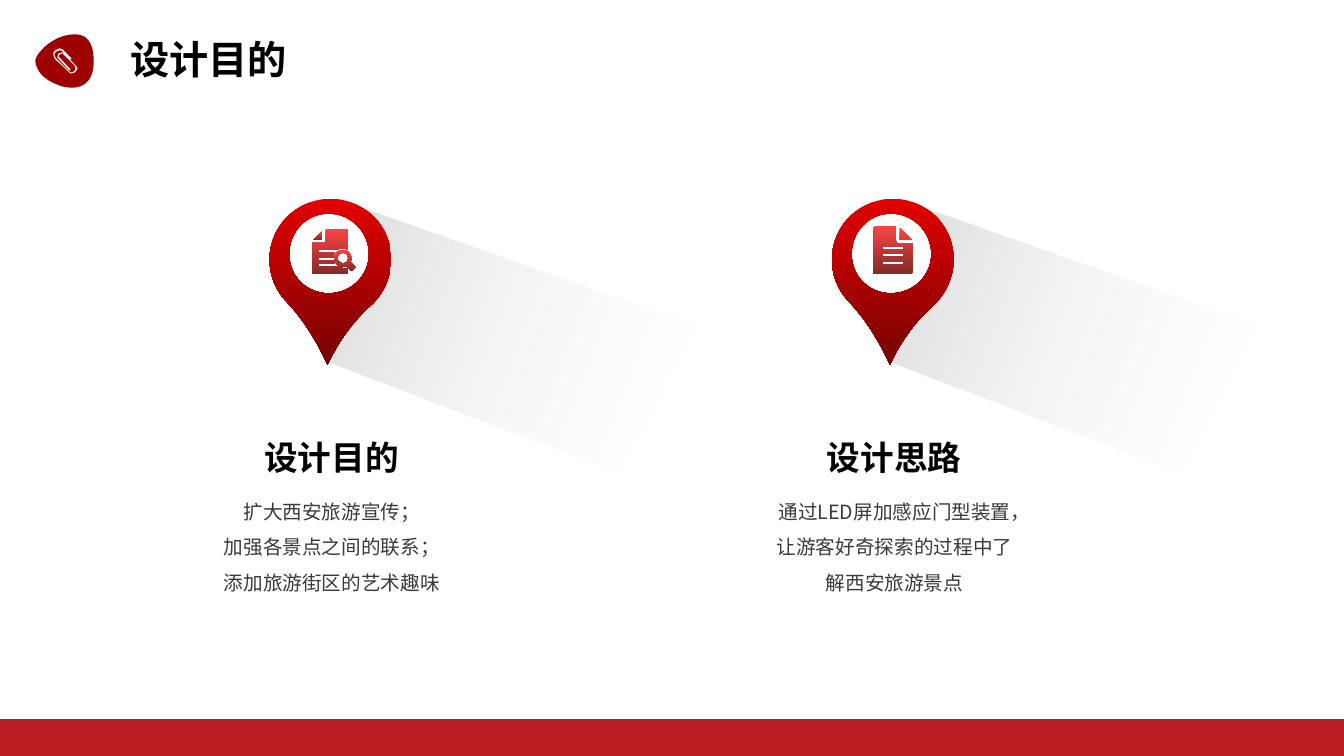
from pptx import Presentation
from pptx.dml.color import RGBColor
from pptx.enum.shapes import MSO_SHAPE
from pptx.enum.text import MSO_AUTO_SIZE, PP_ALIGN
from pptx.oxml.ns import qn
from pptx.util import Cm, Pt
from lxml import etree

RECT = MSO_SHAPE.RECTANGLE
FIT = MSO_AUTO_SIZE.SHAPE_TO_FIT_TEXT
LEFT, CENTER = PP_ALIGN.LEFT, PP_ALIGN.CENTER

FONT = "Noto Sans CJK SC"
COLORS = {
    "bar": "B81E22", "badge": "9C0000", "white": "FFFFFF",
    "heading": "000000", "body": "3B3838",
    "pin_top": "E30000", "pin_bottom": "760303",
    "icon_top": "FE4444", "icon_bottom": "832B2B",
    "shadow_near": "3B3838", "shadow_far": "F2F2F2",
}
PIN_FILL = ("pin_top", "pin_bottom")
ICON_FILL = ("icon_top", "icon_bottom")
SHADOW_FILL = ("shadow_near", "shadow_far")

# Outlines are (left, top, width, height) and a path, in hundredths of an inch
UNIT = Cm(0.0254)
COLUMN_PITCH = 558
PATH_TAGS = {"M": "a:moveTo", "L": "a:lnTo", "C": "a:cubicBezTo", "Z": "a:close"}

PIN = (267, 197, 121, 164), """M 326 212 C 304 212 287 230 287 252
C 287 274 304 291 326 291 C 348 291 366 274 366 252 C 366 230 348 212 326 212 Z
M 330 197 C 345 198 360 204 372 216 C 395 241 393 279 369 302
C 351 318 336 338 325 362 C 314 338 301 317 284 299
C 261 275 262 237 286 214 C 299 202 314 197 330 197 Z"""
SHADOW = (409, 156, 166, 358), """M 564 156 L 575 514 L 411 496 L 409 186
C 566 220 553 153 564 156 Z"""
DOCUMENT = (866, 224, 40, 47), """M 906 242 L 906 269 C 906 271 905 272 904 272
L 869 272 C 867 272 866 271 866 269 L 866 227 C 866 226 867 224 869 224
L 889 224 L 889 239 C 889 240 890 242 892 242 L 906 242 Z
M 896 245 L 876 245 L 876 248 L 896 248 L 896 245 Z
M 896 251.5 L 876 251.5 L 876 254.5 L 896 254.5 L 896 251.5 Z
M 896 259 L 876 259 L 876 262 L 896 262 L 896 259 Z
M 905 238 L 893 238 L 893 226 L 905 238 Z"""
LENS = (331, 247, 21, 22), """M 353 265 L 348 260 C 349 257 349 253 346 250
C 343 247 338 247 334 250 C 331 254 331 259 334 262
C 337 265 341 265 344 264 L 349 269 L 353 265 Z
M 344 260 C 342 262 339 262 337 260 C 334 258 334 255 337 252
C 339 250 342 250 344 252 C 346 255 346 258 344 260 Z"""
SHEET = (310, 227, 36, 45), """M 341 266 C 338 266 336 265 334 264 L 316 264
L 316 261 L 332 261 C 331 260 331 259 331 258 L 316 258 L 316 255 L 331 255
C 331 253 331 252 332 251 L 316 251 L 316 248 L 334 248
C 336 247 338 246 341 246 C 342 246 344 247 346 248
L 346 227 L 323 227 L 323 241 L 310 241 L 310 272 L 346 272
L 346 268 L 344 266 L 341 266 Z"""
SHEET_CORNER = (311, 229, 9, 9), "M 320 229 L 311 238 L 320 238 L 320 229 Z"
BADGE = (35, 34, 58, 54), """M 72 87 C 66 87 61 86 57 84 C 51 82 45 78 41 74
C 38 70 35 65 35 60 C 35 57 39 52 41 50 C 45 45 51 41 57 38
C 64 35 75 32 83 36 C 91 40 93 52 93 60 C 93 70 91 79 83 84
C 80 86 76 87 72 87 Z"""
PAPERCLIP = (53, 48, 24, 25), """M 71 58 L 70 59 L 63 52 C 62 50 61 50 59 50
C 58 50 57 50 56 51 C 55 52 54 53 54 54 C 54 56 55 57 56 58 L 69 71
C 69 71 70 72 71 72 C 72 72 73 72 73 71 C 74 71 75 69 75 68
C 75 67 75 66 74 65 L 63 54 C 63 54 62 53 62 53 C 61 53 60 54 59 54
C 59 55 58 56 58 57 C 58 57 59 57 59 57 L 70 69 L 69 70 L 58 58
C 57 58 57 57 57 57 C 57 56 58 54 58 53 C 59 53 61 52 62 52
C 63 52 63 53 64 53 L 75 65 C 76 66 77 67 77 68 C 77 69 75 71 74 72
C 73 73 72 73 71 73 C 69 73 69 72 68 71 L 55 59 C 54 57 53 56 53 54
C 53 52 53 51 55 50 C 56 49 57 48 59 48 C 61 48 63 49 64 51 L 71 58 Z"""


def rgb(name):
    return RGBColor.from_string(COLORS[name])


def paint(sp, fill):
    """Fill with one colour name, or top to bottom with a pair of them."""
    sp.shadow.inherit = False
    sp.line.fill.background()
    if isinstance(fill, str):
        sp.fill.solid()
        sp.fill.fore_color.rgb = rgb(fill)
        return
    sp.fill.gradient()
    sp.fill.gradient_angle = 270
    for stop, name in zip(sp.fill.gradient_stops, fill):
        stop.color.rgb = rgb(name)


def draw_curves(sp, commands, left, top):
    """Replace the straight frame of a freeform by lines and Bezier curves."""
    outline = next(sp._element.iter(qn("a:path")))
    for child in list(outline):
        outline.remove(child)
    for token in commands.split():
        if token in PATH_TAGS:
            step = etree.SubElement(outline, qn(PATH_TAGS[token]))
            numbers = []
            continue
        numbers.append(float(token))
        if len(numbers) == 2:
            pt = etree.SubElement(step, qn("a:pt"))
            pt.set("x", str(round((numbers[0] - left) * UNIT)))
            pt.set("y", str(round((numbers[1] - top) * UNIT)))
            numbers = []


def add_outline(s, outline, fill, dx=0):
    (left, top, width, height), commands = outline
    x, y = (left + dx) * UNIT, top * UNIT
    right, bottom = x + width * UNIT, y + height * UNIT
    builder = s.shapes.build_freeform(x, y)
    builder.add_line_segments([(right, y), (right, bottom), (x, bottom)])
    sp = builder.convert_to_shape()
    draw_curves(sp, commands, left, top)
    paint(sp, fill)
    return sp


def add_shadow(s, dx):
    sp = add_outline(s, SHADOW, SHADOW_FILL, dx)
    sp.rotation = 291.2
    for color, alpha in zip(sp._element.spPr.iter(qn("a:srgbClr")), (20000, 0)):
        etree.SubElement(color, qn("a:alpha")).set("val", str(alpha))


def add_text(s, box, lines, size, color, bold=False, align=CENTER, spacing=None):
    sp = s.shapes.add_textbox(*(Cm(v) for v in box))
    tf = sp.text_frame
    tf.word_wrap = True
    tf.auto_size = FIT
    for i, line in enumerate(lines):
        p = tf.add_paragraph() if i else tf.paragraphs[0]
        p.alignment = align
        p.line_spacing = spacing
        r = p.add_run()
        r.text = line
        r.font.size = Pt(size)
        r.font.bold = bold
        r.font.name = FONT
        r.font.color.rgb = rgb(color)
        etree.SubElement(r._r.get_or_add_rPr(), qn("a:ea")).set("typeface", FONT)
    return sp


def add_caption(s, left, heading, lines):
    s.shapes.add_group_shape([
        add_text(s, (left + 0.94, 10.89, 4.83, 1.27), [heading], 24, "heading", True),
        add_text(s, (left, 12.18, 6.73, 2.95), lines, 14, "body", spacing=1.5),
    ])


def main():
    prs = Presentation()
    prs.slide_width, prs.slide_height = Cm(33.87), Cm(19.05)
    s = prs.slides.add_slide(prs.slide_layouts[6])

    bar = s.shapes.add_shape(RECT, 0, Cm(18.12), prs.slide_width, Cm(0.93))
    paint(bar, "bar")
    add_text(s, (3.04, 0.76, 8.51, 1.45), ["设计目的"], 28, "heading", True, LEFT)

    for dx in (COLUMN_PITCH, 0):
        add_shadow(s, dx)
        add_outline(s, PIN, PIN_FILL, dx)

    add_caption(s, 19.18, "设计思路",
                ["通过LED屏加感应门型装置，让游客好奇探索的过程中了解西安旅游景点"])
    add_caption(s, 5, "设计目的",
                ["扩大西安旅游宣传；", "加强各景点之间的联系；", "添加旅游街区的艺术趣味"])

    add_outline(s, DOCUMENT, ICON_FILL)
    s.shapes.add_group_shape(
        [add_outline(s, part, ICON_FILL) for part in (LENS, SHEET, SHEET_CORNER)])
    s.shapes.add_group_shape(
        [add_outline(s, BADGE, "badge"), add_outline(s, PAPERCLIP, "white")])

    prs.save("out.pptx")


if __name__ == "__main__":
    main()
